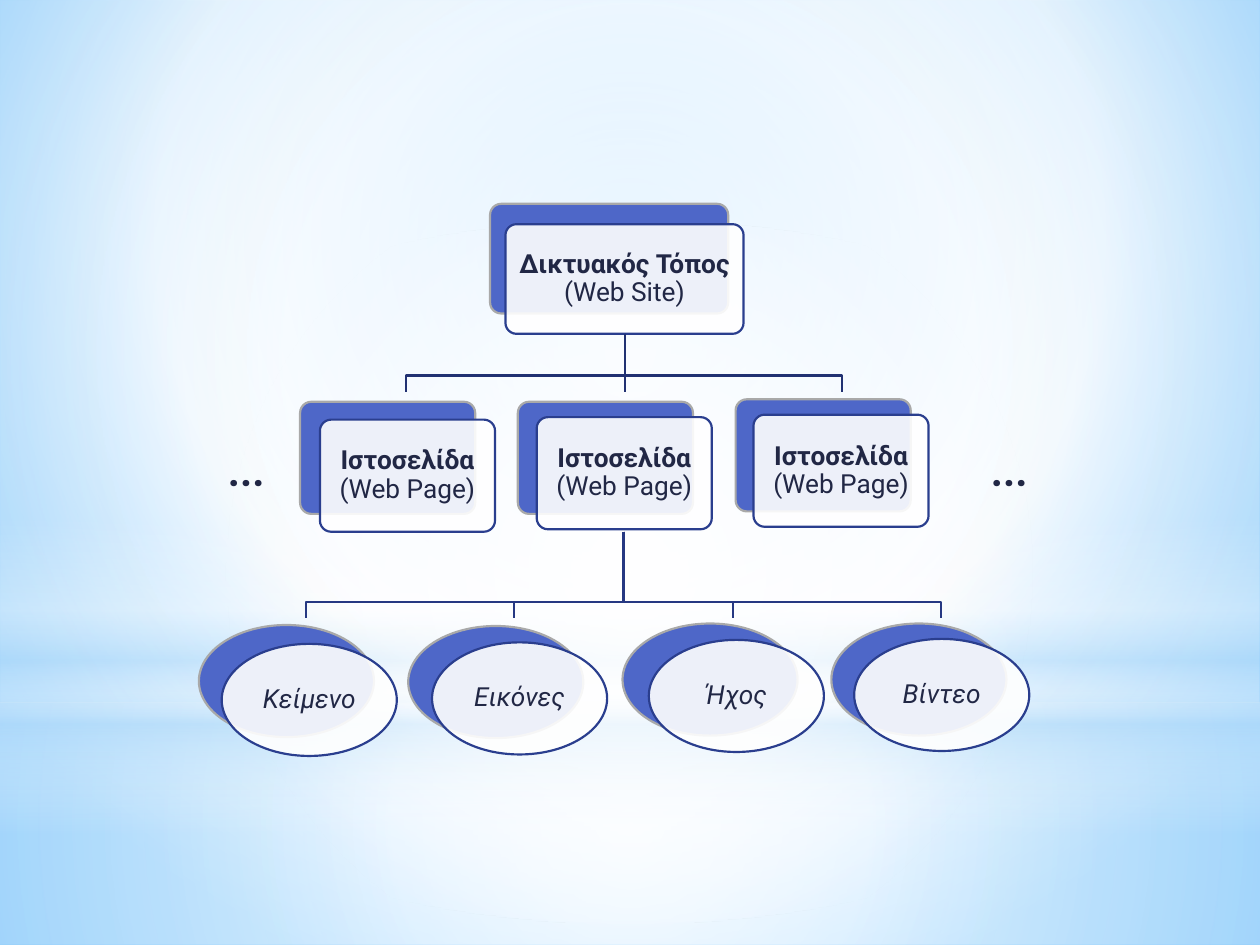
from lxml import etree
from pptx import Presentation
from pptx.dml.color import RGBColor
from pptx.enum.shapes import MSO_CONNECTOR, MSO_SHAPE
from pptx.enum.text import MSO_ANCHOR, PP_ALIGN
from pptx.oxml import parse_xml
from pptx.oxml.ns import nsdecls, qn
from pptx.util import Cm, Pt

RECT, ROUND, OVAL = MSO_SHAPE.RECTANGLE, MSO_SHAPE.ROUNDED_RECTANGLE, MSO_SHAPE.OVAL
MIDDLE, TOP = MSO_ANCHOR.MIDDLE, MSO_ANCHOR.TOP
CENTER = PP_ALIGN.CENTER
STRAIGHT = MSO_CONNECTOR.STRAIGHT

WIDE, HIGH = 25.4, 19.05
FONT = "Roboto"
COLORS = {
    "text": "212745", "card": "FFFFFF", "edge": "2A3E8E",
    "back": "4E67C8", "rim": "A9A9A9",
    "upper": "213172", "lower": "263882",
    "white": "FFFFFF", "mist": "B4DCFA", "sky": "9ED5FF", "deep": "5BB9FF",
}

# Gradient stops: position, colour, opacity (all in percent)
SKY = [(0, "sky", 100), (60, "white", 100), (100, "deep", 100)]
FLOOR = [(0, "white", 91), (37, "white", 76), (100, "mist", 79)]
WALL = [(0, "white", 89), (48, "white", 62), (100, "mist", 79)]
BAND = [(0, "white", 0), (29, "white", 30), (45, "mist", 40),
        (55, "white", 26), (65, "mist", 60), (100, "white", 0)]
GLOW = [(0, "white", 100), (56, "white", 0)]
MID = (50, 50, 50, 50)

# Full-width layers: shape, top, height, stops, focus (None runs downwards)
LAYERS = [
    (RECT, 14.17, 4.88, FLOOR, MID),
    (RECT, 0, 14.17, WALL, MID),
    (RECT, 10.46, 6.35, BAND, None),
    (OVAL, 4.45, 14.17, GLOW, MID),
]

# Runs: text, bold, italic
SITE = [("Δικτυακός Τόπος", True, False), (" (Web Site)", False, False)]
PAGE = [("Ιστοσελίδα ", True, False), ("(Web Page)", False, False)]
DOTS = [("...", True, False)]

# Each level: shape, card size, text inset, cards as (back, front, runs)
LEVELS = [
    (ROUND, (4.8, 2.21), (0.07, 0.07), [
        ((9.88, 4.11), (10.19, 4.52), SITE)]),
    (ROUND, (3.53, 2.26), (0.07, 0.07), [
        ((6.05, 8.1), (6.45, 8.46), PAGE),
        ((10.44, 8.1), (10.82, 8.41), PAGE),
        ((14.83, 8.05), (15.19, 8.36), PAGE)]),
    (OVAL, (3.53, 2.26), (0.51, 0.33), [
        ((4.01, 12.6), (4.47, 12.98), [("Κείμενο", False, True)]),
        ((8.23, 12.62), (8.71, 12.95), [("Εικόνες", False, True)]),
        ((12.55, 12.57), (13.08, 12.9), [("Ήχος", False, True)]),
        ((16.76, 12.57), (17.22, 12.88), [("Βίντεο", False, True)])]),
]

# Branches: colour, stem x, top, bend and end y, x of each end
BRANCHES = [
    ("lower", 12.57, (10.72, 12.14, 12.45), [6.17, 18.97, 10.36, 14.78]),
    ("upper", 12.6, (6.73, 7.57, 7.9), [16.97, 8.18, 12.6]),
]
MORE = [(4.14, 1.65), (19.43, 1.83)]


def rgb(name):
    return RGBColor.from_string(COLORS[name])


def shade(host, stops, focus):
    """Swap the solid fill in host for a gradient."""
    grad = parse_xml(f'<a:gradFill {nsdecls("a")} rotWithShape="1"/>')
    group = etree.SubElement(grad, qn("a:gsLst"))
    for pos, name, alpha in stops:
        stop = etree.SubElement(group, qn("a:gs"), pos=str(pos * 1000))
        color = etree.SubElement(stop, qn("a:srgbClr"), val=COLORS[name])
        if alpha < 100:
            etree.SubElement(color, qn("a:alpha"), val=str(alpha * 1000))
    if focus:
        way = etree.SubElement(grad, qn("a:path"), path="circle")
        rect = etree.SubElement(way, qn("a:fillToRect"))
        for side, part in zip("ltrb", focus):
            rect.set(side, str(part * 1000))
    else:
        etree.SubElement(grad, qn("a:lin"), ang="5400000", scaled="0")
    host.replace(host.find(qn("a:solidFill")), grad)


def stroke(shape, name):
    shape.line.color.rgb = rgb(name)
    shape.line.width = Pt(1.25)


def add_shape(slide, kind, spot, size, fill):
    shape = slide.shapes.add_shape(kind, *map(Cm, (*spot, *size)))
    shape.shadow.inherit = False
    shape.fill.solid()
    shape.fill.fore_color.rgb = rgb(fill)
    if kind == ROUND:
        shape.adjustments[0] = 0.1
    return shape


def add_text(slide, spot, size, runs, points, anchor=TOP):
    box = slide.shapes.add_textbox(*map(Cm, (*spot, *size)))
    frame = box.text_frame
    frame.word_wrap = True
    frame.vertical_anchor = anchor
    para = frame.paragraphs[0]
    para.alignment = CENTER
    for words, bold, italic in runs:
        run = para.add_run()
        run.text = words
        font = run.font
        font.name, font.size = FONT, Pt(points)
        font.bold, font.italic = bold, italic
        font.color.rgb = rgb("text")
    return frame


def add_card(slide, kind, size, inset, back, front, runs):
    stroke(add_shape(slide, kind, back, size, "back"), "rim")
    card = add_shape(slide, kind, front, size, "card")
    stroke(card, "edge")
    color = card.fill._xPr.find(qn("a:solidFill"))[0]
    etree.SubElement(color, qn("a:alpha"), val="90000")
    spot = [at + gap for at, gap in zip(front, inset)]
    room = [full - 2 * gap for full, gap in zip(size, inset)]
    frame = add_text(slide, spot, room, runs, 15, MIDDLE)
    frame.margin_left = frame.margin_right = Cm(0.15)
    frame.margin_top = frame.margin_bottom = Cm(0.15)
    frame.paragraphs[0].line_spacing = 0.9
    frame.paragraphs[0].space_after = Pt(5.25)


def add_branch(slide, color, stem, levels, ends):
    top, bend, low = map(Cm, levels)
    start = Cm(stem)
    for end in map(Cm, ends):
        if end == start:
            line = slide.shapes.add_connector(STRAIGHT, start, top, end, low)
            etree.SubElement(line.element.spPr, qn("a:effectLst"))
        else:
            path = slide.shapes.build_freeform(start, top)
            path.add_line_segments(
                [(start, bend), (end, bend), (end, low)], close=False)
            line = path.convert_to_shape()
            line.shadow.inherit = False
            line.fill.background()
        stroke(line, color)


def main():
    deck = Presentation()
    deck.slide_width, deck.slide_height = Cm(WIDE), Cm(HIGH)
    slide = deck.slides.add_slide(deck.slide_layouts[6])

    slide.background.fill.solid()
    slide.background.fill.fore_color.rgb = rgb("sky")
    shade(slide.element.find(".//" + qn("p:bgPr")), SKY, (20, 10, 20, 60))
    for kind, top, high, stops, focus in LAYERS:
        layer = add_shape(slide, kind, (0, top), (WIDE, high), "white")
        layer.line.fill.background()
        shade(layer.element.spPr, stops, focus)

    for kind, size, inset, cards in LEVELS:
        for card in cards:
            add_card(slide, kind, size, inset, *card)
    for branch in BRANCHES:
        add_branch(slide, *branch)
    for left, wide in MORE:
        add_text(slide, (left, 8.84), (wide, 1.27), DOTS, 24)

    deck.save("out.pptx")


if __name__ == "__main__":
    main()
